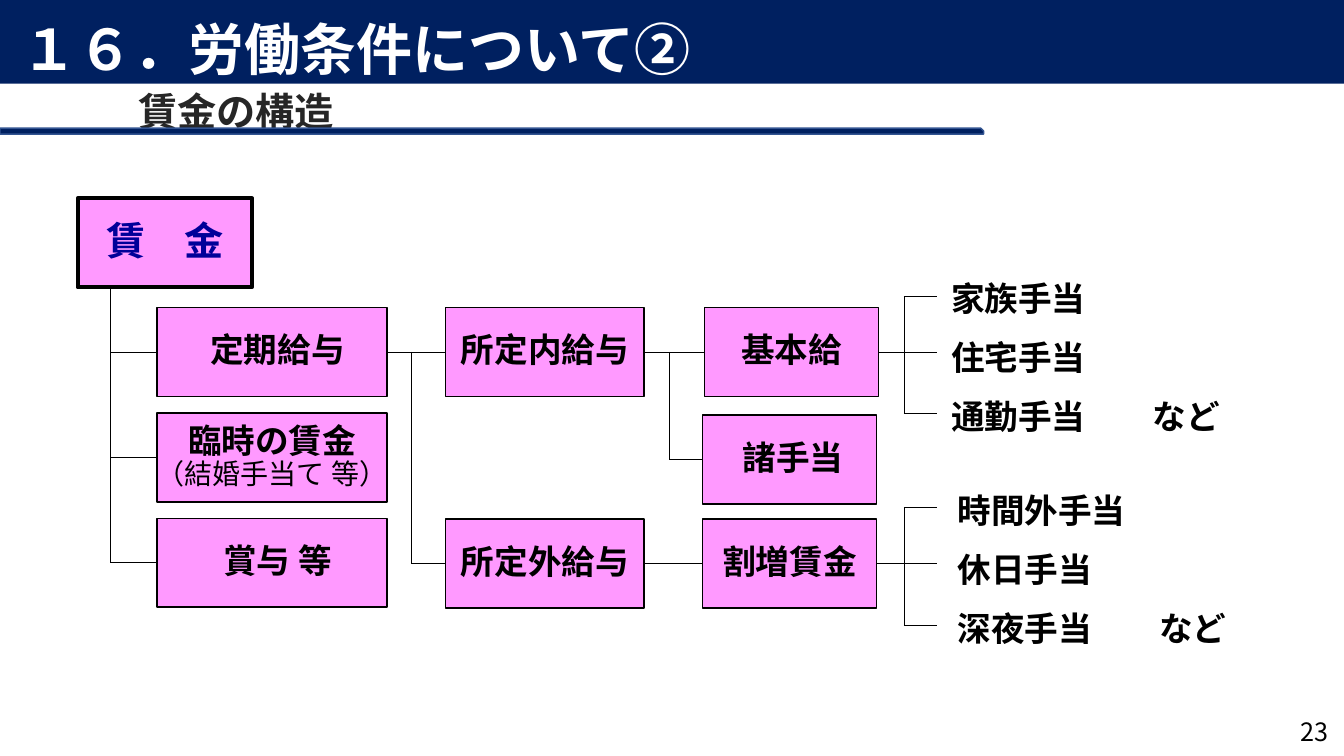
from dataclasses import dataclass

from lxml import etree
from pptx import Presentation
from pptx.dml.color import RGBColor
from pptx.enum.shapes import MSO_CONNECTOR, MSO_SHAPE
from pptx.enum.text import MSO_ANCHOR, MSO_AUTO_SIZE, PP_ALIGN
from pptx.oxml.ns import qn
from pptx.util import Cm, Pt

RECTANGLE, SNIPPED = MSO_SHAPE.RECTANGLE, MSO_SHAPE.SNIP_1_RECTANGLE
STRAIGHT = MSO_CONNECTOR.STRAIGHT
TOP, MIDDLE = MSO_ANCHOR.TOP, MSO_ANCHOR.MIDDLE
NO_FIT = MSO_AUTO_SIZE.NONE
LEFT, CENTER, RIGHT = PP_ALIGN.LEFT, PP_ALIGN.CENTER, PP_ALIGN.RIGHT
LEFT_SIDE, RIGHT_SIDE = 1, 3

FONT = "Noto Sans CJK JP"
NAVY = RGBColor(0x00, 0x20, 0x60)
RULE_EDGE = RGBColor(0x32, 0x54, 0x91)
PINK = RGBColor(0xFF, 0x99, 0xFF)
BLUE = RGBColor(0x00, 0x00, 0x99)
GRAY = RGBColor(0x26, 0x26, 0x26)
BLACK = RGBColor(0x00, 0x00, 0x00)
WHITE = RGBColor(0xFF, 0xFF, 0xFF)

BOX_HEIGHT = 2.24
LABEL_STEP = 1.49


@dataclass
class WageBox:
    text: str
    left: float
    top: float
    width: float
    note: str = ""
    indent: float = 0
    size: int = 24
    color: RGBColor = BLACK
    border: float = 1


@dataclass
class Trunk:
    x: float
    top: float
    bottom: float
    branches: tuple[str, ...]


@dataclass
class Allowances:
    source: str
    left: float
    top: float
    labels: tuple[str, ...]


BOXES = [
    WageBox("賃　金", 1.96, 5.0, 4.39, size=28, color=BLUE, border=3),
    WageBox("定期給与", 3.96, 7.75, 5.79, indent=0.28),
    WageBox("臨時の賃金", 3.96, 10.41, 5.79, note="（結婚手当て 等）"),
    WageBox("賞与 等", 3.96, 13.06, 5.79, indent=0.28),
    WageBox("所定内給与", 11.23, 7.75, 5.0),
    WageBox("所定外給与", 11.23, 13.08, 5.0),
    WageBox("基本給", 17.75, 7.75, 4.39),
    WageBox("諸手当", 17.7, 10.46, 4.39, indent=0.18),
    WageBox("割増賃金", 17.7, 13.08, 4.39),
]
JOINS = [("定期給与", "所定内給与"), ("所定内給与", "基本給"), ("所定外給与", "割増賃金")]
TRUNKS = [
    Trunk(2.79, 7.24, 14.18, ("定期給与", "臨時の賃金", "賞与 等")),
    Trunk(10.36, 8.87, 14.2, ("所定外給与",)),
    Trunk(16.87, 8.87, 11.58, ("諸手当",)),
]
ALLOWANCES = [
    Allowances("基本給", 23.72, 6.99, ("家族手当", "住宅手当", "通勤手当　　など")),
    Allowances("割増賃金", 23.88, 12.34, ("時間外手当", "休日手当", "深夜手当　　など")),
]
BRACKET_X, BRACKET_END = 22.78, 23.62
BRACKET_UP, BRACKET_DOWN = 1.41, 1.55


def write(para, text: str, *, size: int = 24, color: RGBColor = BLACK,
          bold: bool = True, align=LEFT, spacing: float = 0.9) -> None:
    para.alignment = align
    para.line_spacing = spacing
    para.space_before = Pt(0)
    span = para.add_run()
    span.text = text
    span.font.size = Pt(size)
    span.font.bold = bold
    span.font.color.rgb = color
    span.font.name = FONT
    etree.SubElement(span._r.get_or_add_rPr(), qn("a:ea")).set("typeface", FONT)


def add_label(page, text: str, left: float, top: float, width: float,
              height: float, anchor=TOP, **style) -> None:
    box = page.shapes.add_textbox(Cm(left), Cm(top), Cm(width), Cm(height))
    box.text_frame.word_wrap = True
    box.text_frame.vertical_anchor = anchor
    write(box.text_frame.paragraphs[0], text, **style)


def fill_placeholder(holder, text: str, left: float, top: float, width: float,
                     height: float, **style) -> None:
    holder.left, holder.top = Cm(left), Cm(top)
    holder.width, holder.height = Cm(width), Cm(height)
    holder.text_frame.vertical_anchor = TOP
    holder.text_frame.auto_size = NO_FIT
    para = holder.text_frame.paragraphs[0]
    write(para, text, spacing=1.0, **style)
    properties = para._p.get_or_add_pPr()
    properties.set("marL", "0")
    properties.set("indent", "0")
    etree.SubElement(properties, qn("a:buNone"))


def add_block(page, kind, left: float, top: float, width: float, height: float,
              fill: RGBColor, edge: RGBColor | None = None, border: float = 1):
    block = page.shapes.add_shape(kind, Cm(left), Cm(top), Cm(width), Cm(height))
    block.shadow.inherit = False
    block.fill.solid()
    block.fill.fore_color.rgb = fill
    if edge is None:
        block.line.fill.background()
    else:
        block.line.color.rgb = edge
        block.line.width = Pt(border)
    return block


def add_wage_box(page, item: WageBox):
    block = add_block(page, RECTANGLE, item.left, item.top, item.width, BOX_HEIGHT,
                      PINK, BLACK, item.border)
    frame = block.text_frame
    frame.word_wrap = False
    frame.vertical_anchor = MIDDLE
    frame.margin_left, frame.margin_right = Cm(item.indent), Cm(0)
    write(frame.paragraphs[0], item.text, size=item.size, color=item.color, align=CENTER)
    if item.note:
        write(frame.add_paragraph(), item.note, size=20, bold=False, align=CENTER)
    return block


def add_line(page, x1: int, y1: int, x2: int, y2: int, source=None, target=None) -> None:
    line = page.shapes.add_connector(STRAIGHT, x1, y1, x2, y2)
    line.line.color.rgb = BLACK
    line.line.width = Pt(0.5)
    etree.SubElement(line.element.spPr, qn("a:effectLst"))
    if source is not None:
        line.begin_connect(source, RIGHT_SIDE)
    if target is not None:
        line.end_connect(target, LEFT_SIDE)


def middle(block) -> int:
    return block.top + block.height // 2


def add_allowances(page, group: Allowances, source) -> None:
    center = middle(source)
    high, low = center - Cm(BRACKET_UP), center + Cm(BRACKET_DOWN)
    stem, end = Cm(BRACKET_X), Cm(BRACKET_END)
    add_line(page, source.left + source.width, center, end, center, source=source)
    add_line(page, stem, high, stem, low)
    for y in (high, low):
        add_line(page, stem, y, end, y)
    for row, text in enumerate(group.labels):
        add_label(page, text, group.left, group.top + row * LABEL_STEP, 7.75, 1.32)


def main() -> None:
    deck = Presentation()
    deck.slide_width, deck.slide_height = Cm(33.87), Cm(19.05)
    page = deck.slides.add_slide(deck.slide_layouts[1])

    # Heading: the title is raised above its banner
    add_block(page, RECTANGLE, 0, 0, 33.87, 2.11, NAVY)
    title = page.shapes.title
    fill_placeholder(title, "１６．労働条件について②", 0.28, 0.25, 32.31, 1.96,
                     size=40, color=WHITE)
    title.element.getparent().append(title.element)
    fill_placeholder(page.placeholders[1], "賃金の構造", 3.23, 2.08, 29.79, 1.45,
                     size=28, color=GRAY)
    rule = add_block(page, SNIPPED, 0, 3.23, 24.79, 0.15, NAVY, RULE_EDGE)
    rule.adjustments[0] = 0.5

    # Wage tree
    blocks = {item.text: add_wage_box(page, item) for item in BOXES}
    for start, finish in JOINS:
        add_line(page, 0, 0, 0, 0, blocks[start], blocks[finish])
    for trunk in TRUNKS:
        x = Cm(trunk.x)
        add_line(page, x, Cm(trunk.top), x, Cm(trunk.bottom))
        for name in trunk.branches:
            block = blocks[name]
            add_line(page, x, middle(block), block.left, middle(block), target=block)
    for group in ALLOWANCES:
        add_allowances(page, group, blocks[group.source])

    # Page number
    add_label(page, "23", 31.83, 17.93, 1.91, 1.02, anchor=MIDDLE, size=18,
              bold=False, align=RIGHT, spacing=1.0)
    deck.save("out.pptx")


if __name__ == "__main__":
    main()
